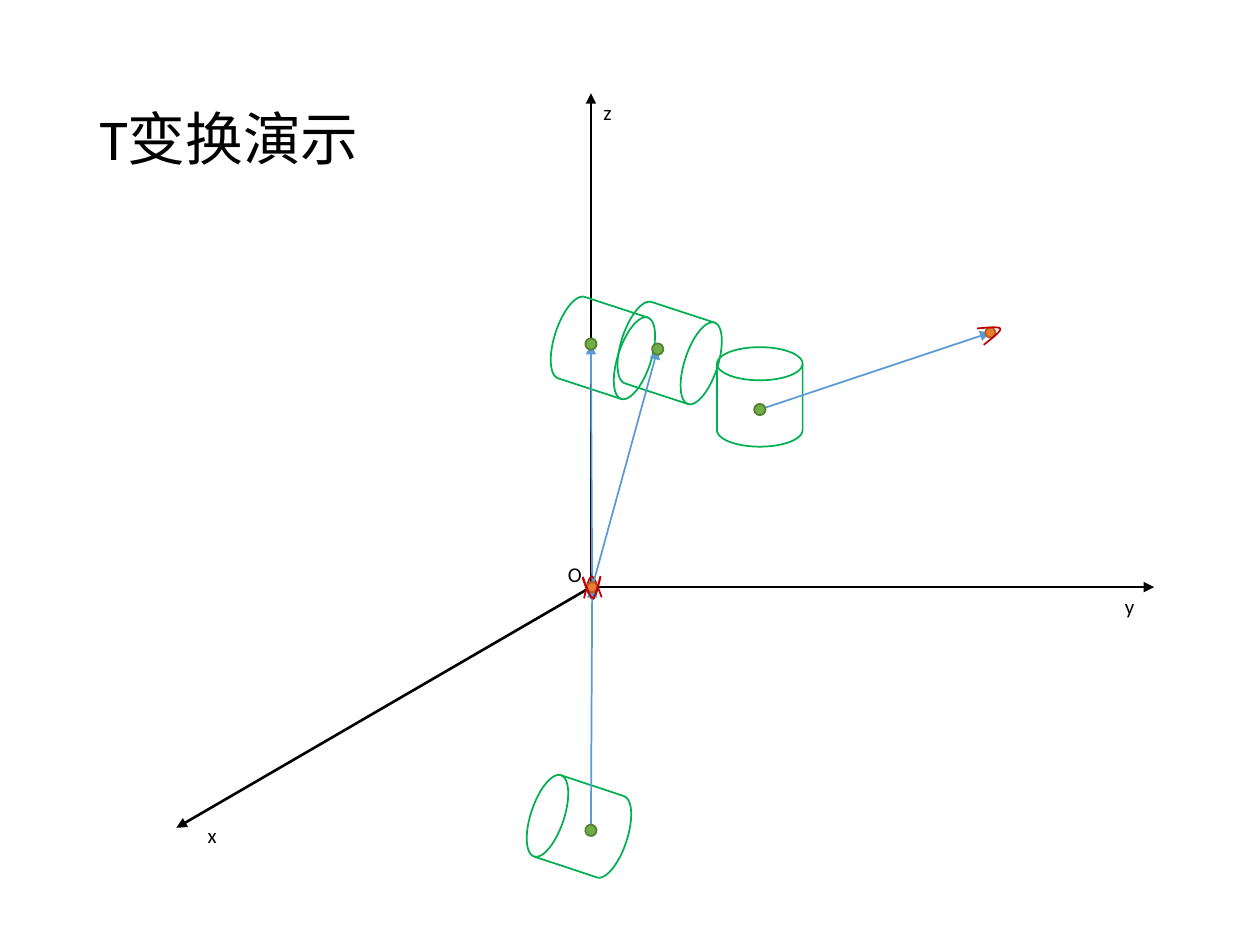
"""Build a slide showing camera poses around a three-axis frame."""
from dataclasses import dataclass
from math import cos, radians, sin

from lxml.etree import SubElement
from pptx import Presentation
from pptx.dml.color import RGBColor
from pptx.enum.shapes import MSO_CONNECTOR as Connector, MSO_SHAPE as Shape
from pptx.enum.text import MSO_ANCHOR as Anchor, MSO_AUTO_SIZE as AutoSize, PP_ALIGN as Align
from pptx.oxml.ns import qn
from pptx.util import Emu, Inches, Pt

COLORS = {
    "ink": "000000",
    "cylinder": "00B050",
    "ray": "5B9BD5",
    "target": "70AD47",
    "target_edge": "538035",
    "viewer": "ED7D31",
    "viewer_edge": "AF5C24",
    "eye": "C00000",
}
FONT = "Calibri"
ORIGIN = (4.69, 4.66)
CYLINDER_WIDTH, CYLINDER_HEIGHT = 0.68, 0.79
CYLINDER_OFFSET = 0.1
EYE_CURVES = (
    ((-0.07, -0.085), (-0.045, 0), (-0.02, 0.085), (0, 0.085)),
    ((0, 0.085), (0.02, 0.085), (0.045, 0), (0.07, -0.085)),
)
CURVE_STEPS = 12


@dataclass(frozen=True)
class Axis:
    name: str
    end: tuple[float, float]
    label_box: tuple[float, float, float, float]


@dataclass(frozen=True)
class Pose:
    target: tuple[float, float]
    viewer: tuple[float, float]
    rotation: float
    eye_rotation: float
    arrow: str


AXES = (
    Axis("x", (1.4, 6.57), (1.55, 6.48, 0.5, 0.3)),
    Axis("y", (9.16, 4.66), (8.83, 4.66, 0.43, 0.3)),
    Axis("z", (4.69, 0.74), (4.69, 0.74, 0.45, 0.3)),
)
POSES = (
    Pose((6.03, 3.25), (7.86, 2.64), 0, 248.2, "tailEnd"),
    Pose((4.69, 2.73), (4.7, 4.67), 108.1, 356.3, "headEnd"),
    Pose((4.69, 6.59), (4.7, 4.66), 288.4, 176.6, "tailEnd"),
    Pose((5.22, 2.77), (4.7, 4.66), 108.1, 357.5, "headEnd"),
)


def rgb(name: str) -> RGBColor:
    return RGBColor.from_string(COLORS[name])


def write_text(frame, text: str, *, size: float, color: str = "ink",
               align=Align.LEFT, anchor=Anchor.TOP, spacing: float = 1.0) -> None:
    frame.word_wrap = True
    frame.vertical_anchor = anchor
    paragraph = frame.paragraphs[0]
    paragraph.alignment = align
    paragraph.line_spacing = spacing
    run = paragraph.add_run()
    run.text = text
    run.font.name = FONT
    run.font.size = Pt(size)
    run.font.color.rgb = rgb(color)


def add_label(slide, text: str, box: tuple[float, float, float, float]) -> None:
    frame = slide.shapes.add_textbox(*map(Inches, box)).text_frame
    write_text(frame, text, size=12)
    frame.auto_size = AutoSize.SHAPE_TO_FIT_TEXT


def add_arrow(slide, start: tuple[float, float], end: tuple[float, float],
              color: str, width: float, arrow: str = "tailEnd") -> None:
    line = slide.shapes.add_connector(Connector.STRAIGHT, *map(Inches, start + end))
    line.line.color.rgb = rgb(color)
    line.line.width = Pt(width)
    SubElement(line.line._get_or_add_ln(), qn("a:" + arrow), type="triangle")
    SubElement(line._element.spPr, qn("a:effectLst"))


def style_shape(shape, line: str, rotation: float, fill: str | None = None) -> None:
    shape.shadow.inherit = False
    shape.rotation = rotation
    shape.line.color.rgb = rgb(line)
    shape.line.width = Pt(1)
    if fill:
        shape.fill.solid()
        shape.fill.fore_color.rgb = rgb(fill)
    else:
        shape.fill.background()


def add_centered(slide, kind, center: tuple[float, float], width: float, height: float,
                 line: str, rotation: float, fill: str | None = None) -> None:
    left, top = center[0] - width / 2, center[1] - height / 2
    shape = slide.shapes.add_shape(kind, *map(Inches, (left, top, width, height)))
    style_shape(shape, line, rotation, fill)


def bezier_point(curve, t: float) -> tuple[float, float]:
    weights = ((1 - t) ** 3, 3 * t * (1 - t) ** 2, 3 * t ** 2 * (1 - t), t ** 3)
    return tuple(sum(w * point[i] for w, point in zip(weights, curve)) for i in (0, 1))


def add_eye(slide, center: tuple[float, float], rotation: float) -> None:
    points = [
        tuple(Inches(c + offset) for c, offset in zip(center, bezier_point(curve, step / CURVE_STEPS)))
        for curve in EYE_CURVES for step in range(CURVE_STEPS + 1)
    ]
    builder = slide.shapes.build_freeform(*points[0], scale=Emu(1))
    builder.add_line_segments(points[1:], close=False)
    style_shape(builder.convert_to_shape(), "eye", rotation)


def add_pose(slide, pose: Pose) -> None:
    angle = radians(pose.rotation)
    x, y = pose.target
    cylinder_center = (x + CYLINDER_OFFSET * sin(angle), y - CYLINDER_OFFSET * cos(angle))
    add_centered(slide, Shape.FLOWCHART_MAGNETIC_DISK, cylinder_center,
                 CYLINDER_WIDTH, CYLINDER_HEIGHT, "cylinder", pose.rotation)
    add_arrow(slide, pose.target, pose.viewer, "ray", 1, pose.arrow)
    for name, center, size in (("target", pose.target, 0.09), ("viewer", pose.viewer, 0.08)):
        add_centered(slide, Shape.OVAL, center, size, size, name + "_edge", pose.rotation, name)
    add_eye(slide, pose.viewer, pose.eye_rotation)


def add_title(slide, text: str) -> None:
    title = slide.shapes.title
    title.left, title.top, title.width, title.height = map(Inches, (0.69, 0.4, 8.62, 1.45))
    write_text(title.text_frame, text, size=33, anchor=Anchor.MIDDLE, spacing=0.9)


def main() -> None:
    presentation = Presentation()
    presentation.slide_width, presentation.slide_height = Inches(10), Inches(7.5)
    slide = presentation.slides.add_slide(presentation.slide_layouts[5])
    add_title(slide, "T变换演示")
    for axis in AXES:
        add_arrow(slide, ORIGIN, axis.end, "ink", 1.5)
        add_label(slide, axis.name, axis.label_box)
    add_label(slide, "O", (4.41, 4.41, 0.63, 0.3))
    for pose in POSES:
        add_pose(slide, pose)
    presentation.save("out.pptx")


if __name__ == "__main__":
    main()
